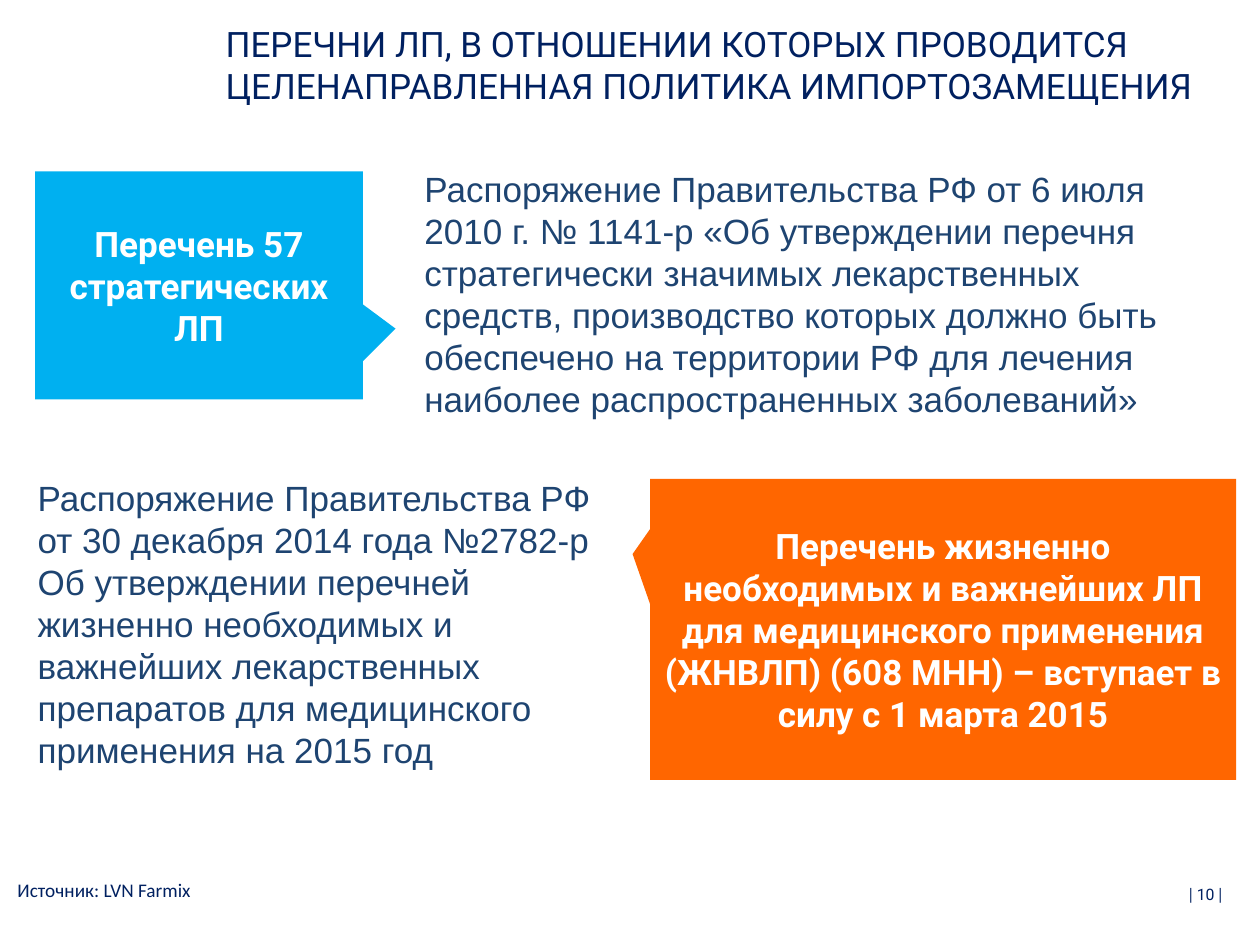
import pptx
import pptx.util
import pptx.dml.color
import pptx.enum.shapes
import pptx.enum.text

Inches = pptx.util.Inches
RGBColor = pptx.dml.color.RGBColor
PP_ALIGN = pptx.enum.text.PP_ALIGN
MSO_ANCHOR = pptx.enum.text.MSO_ANCHOR

NAVY = RGBColor(0x00, 0x20, 0x60)
BLUE = RGBColor(0x1E, 0x44, 0x71)
CYAN = RGBColor(0x00, 0xB0, 0xF0)
ORANGE = RGBColor(0xFF, 0x66, 0x00)
WHITE = RGBColor(0xFF, 0xFF, 0xFF)


def format_run(r, font, size, color, bold=False):
    r.font.name = font
    r.font.size = pptx.util.Pt(size)
    r.font.color.rgb = color
    r.font.bold = bold


def set_text(sp, text, font, size, color, bold=False,
             align=PP_ALIGN.LEFT, anchor=MSO_ANCHOR.TOP):
    tf = sp.text_frame
    tf.word_wrap = True
    tf.auto_size = pptx.enum.text.MSO_AUTO_SIZE.NONE
    tf.vertical_anchor = anchor
    tf.text = text
    p = tf.paragraphs[0]
    p.alignment = align
    format_run(p.runs[0], font, size, color, bold)


def add_title(s, text, left, top, width, height):
    sp = s.shapes.title
    sp.left, sp.top = Inches(left), Inches(top)
    sp.width, sp.height = Inches(width), Inches(height)
    set_text(sp, text, "Roboto", 20, NAVY)


def add_text(s, text, left, top, width, height, font="Arial", size=20, color=BLUE):
    sp = s.shapes.add_textbox(Inches(left), Inches(top), Inches(width), Inches(height))
    set_text(sp, text, font, size, color)


def add_callout(s, text, left, top, width, height, fill, tip):
    sp = s.shapes.add_shape(pptx.enum.shapes.MSO_SHAPE.RECTANGULAR_CALLOUT,
                            Inches(left), Inches(top), Inches(width), Inches(height))
    sp.adjustments[0], sp.adjustments[1] = tip
    sp.shadow.inherit = False
    sp.fill.solid()
    sp.fill.fore_color.rgb = fill
    sp.line.fill.background()
    set_text(sp, text, "Roboto", 20, WHITE, True, PP_ALIGN.CENTER, MSO_ANCHOR.MIDDLE)


def add_page_number(s, number, left, top, width, height):
    sp = s.shapes.add_textbox(Inches(left), Inches(top), Inches(width), Inches(height))
    sp.text_frame.word_wrap = True
    p = sp.text_frame.paragraphs[0]
    p.alignment = PP_ALIGN.RIGHT
    for text, font in (("| ", "Lato"), (number, "Roboto"), (" |", "Lato")):
        r = p.add_run()
        r.text = text
        format_run(r, font, 9, NAVY)


def main():
    prs = pptx.Presentation()
    prs.slide_width, prs.slide_height = Inches(10), Inches(7.5)
    s = prs.slides.add_slide(prs.slide_layouts.get_by_name("Title Only"))

    # Title
    add_title(s, "ПЕРЕЧНИ ЛП, В ОТНОШЕНИИ КОТОРЫХ ПРОВОДИТСЯ ЦЕЛЕНАПРАВЛЕННАЯ "
              "ПОЛИТИКА ИМПОРТОЗАМЕЩЕНИЯ", 1.69, 0.13, 8.07, 0.58)

    # Strategic medicines
    add_text(s, "Распоряжение Правительства РФ от 6 июля 2010 г. № 1141-р "
             "«Об утверждении перечня стратегически значимых лекарственных средств, "
             "производство которых должно быть обеспечено на территории РФ для лечения "
             "наиболее распространенных заболеваний»", 3.27, 1.28, 6.54, 2.12)
    add_callout(s, "Перечень 57 стратегических ЛП",
                0.28, 1.36, 2.6, 1.81, CYAN, (0.6, 0.19))

    # Essential medicines
    add_text(s, "Распоряжение Правительства РФ от 30 декабря 2014 года №2782-р "
             "Об утверждении перечней жизненно необходимых и важнейших лекарственных "
             "препаратов для медицинского применения на 2015 год", 0.2, 3.73, 4.72, 2.46)
    add_callout(s, "Перечень жизненно необходимых и важнейших ЛП для медицинского "
                "применения (ЖНВЛП) (608 МНН) – вступает в силу с 1 марта 2015",
                5.16, 3.8, 4.65, 2.39, ORANGE, (-0.53, -0.25))

    # Footer
    add_text(s, "Источник: LVN Farmix", 0.04, 6.92, 8.15, 0.29, "Calibri", 11, NAVY)
    add_page_number(s, "10", 8.62, 6.97, 1.18, 0.4)

    prs.save("out.pptx")


if __name__ == "__main__":
    main()
